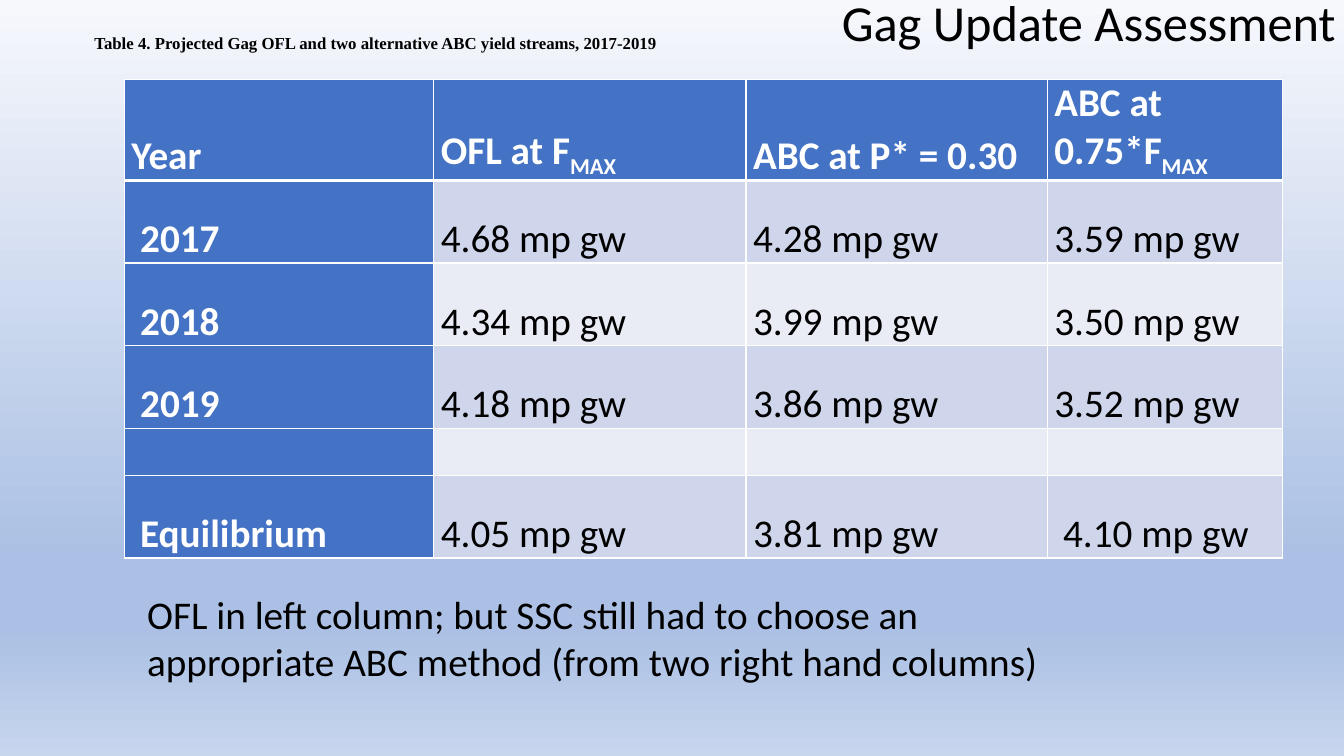
"""Build the slide of projected gag yield streams."""
from dataclasses import dataclass
from typing import Any

from lxml.etree import SubElement as Sub
from pptx import Presentation as Deck
from pptx.dml.color import RGBColor as Rgb
from pptx.enum.text import MSO_ANCHOR as Anchor, MSO_AUTO_SIZE as Auto, PP_ALIGN as Align
from pptx.oxml.ns import qn
from pptx.util import Cm, Pt


@dataclass(frozen=True)
class Theme:
    """Hold colours, fonts and type sizes."""
    black: str = "000000"
    white: str = "FFFFFF"
    head: str = "4472C4"
    bands: tuple[str, ...] = ("CFD5EA", "E9EBF5")
    sky: tuple[tuple[int, str], ...] = (
        (0, "F6F8FC"), (74, "ABC0E4"), (83, "ABC0E4"), (100, "C7D5ED"))
    sans: str = "Calibri"
    serif: str = "Times New Roman"
    title: int = 36
    body: int = 28
    small: int = 12


@dataclass(frozen=True)
class Label:
    """Describe one block of text and its box in centimetres."""
    text: str
    box: tuple[float, float, float, float]
    size: int
    font: str
    bold: bool = False
    anchor: Anchor = Anchor.TOP


LOOK = Theme()
TITLE = Label("Gag Update Assessment", (20.96, -0.36, 15.62, 1.8),
              LOOK.title, LOOK.sans)
NOTES = (
    Label("OFL in left column; but SSC still had to choose an appropriate "
          "ABC method (from two right hand columns)",
          (3.46, 14.76, 22.96, 3.84), LOOK.body, LOOK.sans),
    Label("Table 4. Projected Gag OFL and two alternative ABC yield streams, 2017-2019",
          (2.13, 0.69, 15.37, 0.76), LOOK.small, LOOK.serif, True, Anchor.MIDDLE),
)
ROWS = (
    ("Year", "OFL at F_MAX", "ABC at P* = 0.30", "ABC at 0.75*F_MAX"),
    (" 2017", "4.68 mp gw", "4.28 mp gw", "3.59 mp gw"),
    (" 2018", "4.34 mp gw", "3.99 mp gw", "3.50 mp gw"),
    (" 2019", "4.18 mp gw", "3.86 mp gw", "3.52 mp gw"),
    ("", "", "", ""),
    (" Equilibrium", "4.05 mp gw", "3.81 mp gw ", " 4.10 mp gw"),
)
WIDE = (7.8, 7.87, 7.59, 5.92)
HIGH = (2.52, 2.08, 2.08, 2.08, 1.19, 2.08)


def put(item: Any, vals: dict[str, Any]) -> None:
    """Set each named value on an object."""
    for name, val in vals.items():
        setattr(item, name, val)


def write(para: Any, text: str, size: int, font: str, bold: bool, tint: str) -> None:
    """Write text, lowering the part after an underscore."""
    for part, bit in enumerate(text.split("_")):
        run = para.add_run()
        run.text = bit
        put(run.font, {"size": Pt(size), "name": font, "bold": bold})
        run.font.color.rgb = Rgb.from_string(tint)
        if part:
            run.font._element.set("baseline", "-25000")


def fill_label(shape: Any, label: Label) -> None:
    """Place a text shape and write its label."""
    put(shape, dict(zip(("left", "top", "width", "height"), map(Cm, label.box))))
    frame = shape.text_frame
    put(frame, {"auto_size": Auto.NONE, "word_wrap": True,
                "vertical_anchor": label.anchor})
    para = frame.paragraphs[0]
    para.alignment = Align.LEFT
    write(para, label.text, label.size, label.font, label.bold, LOOK.black)


def edge(cell: Any, top: bool) -> None:
    """Draw white cell borders, heavy below the header."""
    props = cell._tc.get_or_add_tcPr()
    for side in "LRTB":
        wide = 3 if top and side == "B" else 1
        line = Sub(props, qn(f"a:ln{side}"), w=str(Pt(wide)))
        Sub(Sub(line, qn("a:solidFill")), qn("a:srgbClr"), val=LOOK.white)


def draw_table(slide: Any) -> None:
    """Draw the yield table."""
    grid = slide.shapes.add_table(len(ROWS), len(WIDE), Cm(3.13), Cm(2),
                                  Cm(sum(WIDE)), Cm(sum(HIGH))).table
    grid.first_col = True
    for col, wide in zip(grid.columns, WIDE):
        col.width = Cm(wide)
    for row, texts in enumerate(ROWS):
        grid.rows[row].height = Cm(HIGH[row])
        for col, text in enumerate(texts):
            cell = grid.cell(row, col)
            head = row == 0 or col == 0
            put(cell, {"vertical_anchor": Anchor.BOTTOM, "margin_left": Cm(0.18),
                       "margin_right": Cm(0.18), "margin_top": 0, "margin_bottom": 0})
            edge(cell, row == 0)
            cell.fill.solid()
            tone = LOOK.head if head else LOOK.bands[(row - 1) % 2]
            cell.fill.fore_color.rgb = Rgb.from_string(tone)
            if text:
                write(cell.text_frame.paragraphs[0], text, LOOK.body, LOOK.sans,
                      head, LOOK.white if head else LOOK.black)


def paint(slide: Any) -> None:
    """Give the slide its gradient sky."""
    fill = slide.background.fill
    fill.gradient()
    fill.gradient_angle = 270
    stops = next(slide.element.iter(qn("a:gsLst")))
    for stop in list(stops):
        stops.remove(stop)
    for spot, tint in LOOK.sky:
        Sub(Sub(stops, qn("a:gs"), pos=str(spot * 1000)), qn("a:srgbClr"), val=tint)


def main() -> None:
    """Build and save the deck."""
    deck = Deck()
    put(deck, {"slide_width": Cm(33.87), "slide_height": Cm(19.05)})
    slide = deck.slides.add_slide(deck.slide_layouts.get_by_name("Title Only"))
    paint(slide)
    fill_label(slide.shapes.title, TITLE)
    draw_table(slide)
    for label in NOTES:
        fill_label(slide.shapes.add_textbox(0, 0, 0, 0), label)
    deck.save("out.pptx")


if __name__ == "__main__":
    main()
